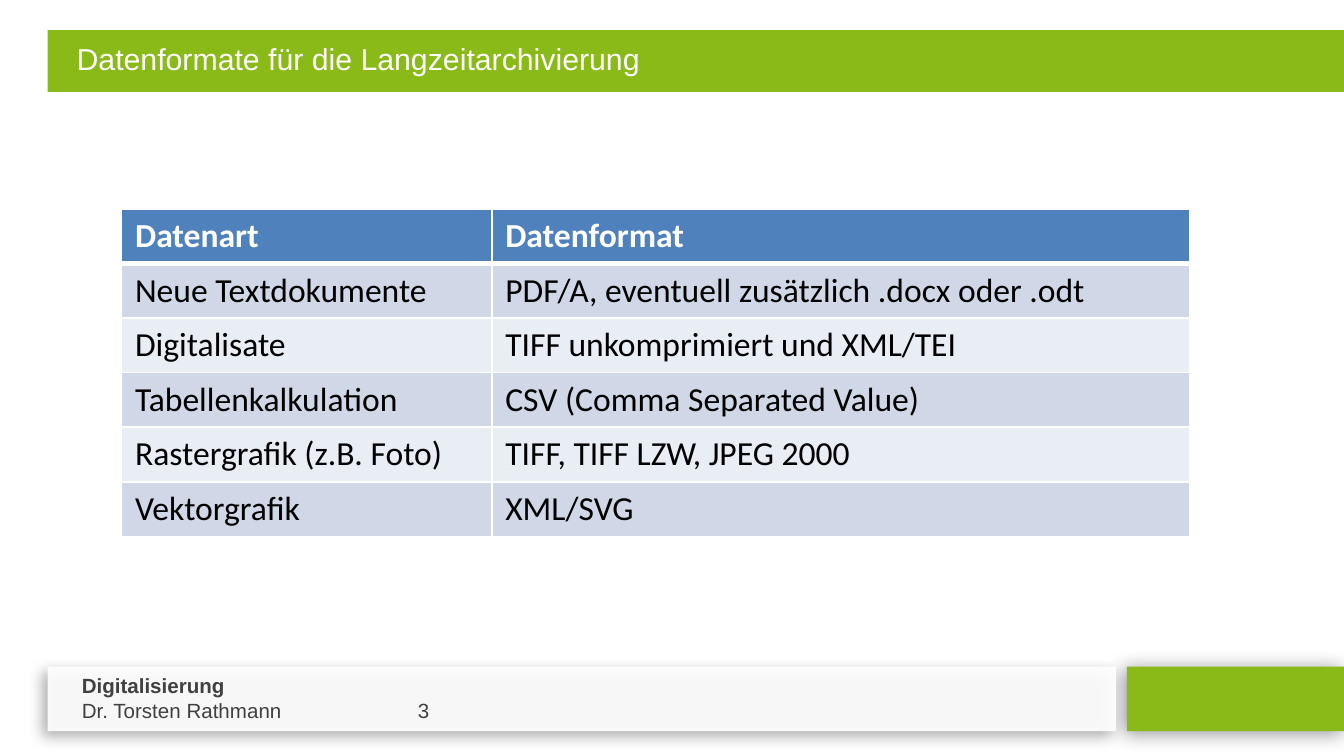
from lxml import etree
from pptx import Presentation
from pptx.dml.color import RGBColor
from pptx.enum.shapes import MSO_SHAPE
from pptx.enum.text import MSO_ANCHOR, PP_ALIGN
from pptx.oxml.ns import qn
from pptx.util import Inches, Pt

RECTANGLE = MSO_SHAPE.RECTANGLE
TOP = MSO_ANCHOR.TOP
LEFT = PP_ALIGN.LEFT

GREEN, WHITE, BLACK, GREY = "89BA17", "FFFFFF", "000000", "404040"
HEADER_BLUE = "4F81BD"
BAND_COLOURS = ("D0D8E8", "E9EDF4")
TITLE_ONLY = 5

FORMATS = [
    ("Datenart", "Datenformat"),
    ("Neue Textdokumente", "PDF/A, eventuell zusätzlich .docx oder .odt"),
    ("Digitalisate", "TIFF unkomprimiert und XML/TEI"),
    ("Tabellenkalkulation", "CSV (Comma Separated Value)"),
    ("Rastergrafik (z.B. Foto)", "TIFF, TIFF LZW, JPEG 2000"),
    ("Vektorgrafik", "XML/SVG"),
]


def colour(value):
    return RGBColor.from_string(value)


def grid(units):
    """The slide is a grid of 100 columns by 56.25 rows."""
    return Inches(units / 10)


def add_element(parent, tag, **attributes):
    element = etree.SubElement(parent, qn(tag))
    for name, value in attributes.items():
        element.set(name, str(value))
    return element


class SlideBuilder:
    heading_font, table_font = "Arial", "Calibri"

    def __init__(self, slide):
        self.slide = slide

    def style(self, paragraph, font, size, text_colour, bold=False):
        paragraph.alignment = LEFT
        paragraph.font.name = font
        paragraph.font.size = Pt(size)
        paragraph.font.bold = bold
        paragraph.font.color.rgb = colour(text_colour)

    def bar(self, left, top, width, height, fill, opacity=100, shadow=None):
        shape = self.slide.shapes.add_shape(RECTANGLE, *map(grid, (left, top, width, height)))
        shape.fill.solid()
        shape.fill.fore_color.rgb = colour(fill)
        shape.line.fill.background()
        shape.shadow.inherit = False
        properties = shape.element.spPr
        if opacity < 100:
            fill_colour = properties.find(qn("a:solidFill")).find(qn("a:srgbClr"))
            add_element(fill_colour, "a:alpha", val=opacity * 1000)
        if shadow:
            strength, blur, distance, angle = shadow
            outer = add_element(properties.find(qn("a:effectLst")), "a:outerShdw",
                                blurRad=Pt(blur), dist=Pt(distance), dir=angle * 60000,
                                algn="ctr", rotWithShape=0)
            shadow_colour = add_element(outer, "a:srgbClr", val=BLACK)
            add_element(shadow_colour, "a:alpha", val=strength * 1000)

    def title(self, text, left, top, width, height, indent):
        title = self.slide.shapes.title
        title.left, title.top, title.width, title.height = map(grid, (left, top, width, height))
        self.slide.shapes.element.append(title.element)  # in front of the bar
        frame = title.text_frame
        frame.margin_left = frame.margin_right = grid(1)
        frame.margin_top, frame.margin_bottom = grid(0.8), grid(0.5)
        frame.vertical_anchor = TOP
        frame.text = text
        paragraph = frame.paragraphs[0]
        paragraph._p.get_or_add_pPr().set("marL", str(grid(indent)))
        self.style(paragraph, self.heading_font, 16.2, WHITE)

    def footer(self, lines, left, top, width, height, tabs):
        box = self.slide.shapes.add_textbox(*map(grid, (left, top, width, height)))
        frame = box.text_frame
        frame.word_wrap = True
        frame.text = "\n".join(lines)
        for index, paragraph in enumerate(frame.paragraphs):
            stops = add_element(paragraph._p.get_or_add_pPr(), "a:tabLst")
            for tab in tabs:
                add_element(stops, "a:tab", pos=grid(tab), algn="l")
            self.style(paragraph, self.heading_font, 11, GREY, bold=index == 0)

    def borders(self, cell, top, bottom):
        properties = cell._tc.get_or_add_tcPr()
        for side, width in zip("LRTB", (1, 1, top, bottom)):
            line = add_element(properties, f"a:ln{side}", w=Pt(width))
            add_element(add_element(line, "a:solidFill"), "a:srgbClr", val=WHITE)

    def table(self, rows, left, top, columns, row_height):
        frame = self.slide.shapes.add_table(
            len(rows), len(columns), grid(left), grid(top),
            grid(sum(columns)), grid(row_height * len(rows)))
        table = frame.table
        for column, width in zip(table.columns, columns):
            column.width = grid(width)
        for row_index, texts in enumerate(rows):
            header = row_index == 0
            fill = HEADER_BLUE if header else BAND_COLOURS[(row_index - 1) % 2]
            for column_index, text in enumerate(texts):
                cell = table.cell(row_index, column_index)
                self.borders(cell, 3 if row_index == 1 else 1, 3 if header else 1)
                cell.fill.solid()
                cell.fill.fore_color.rgb = colour(fill)
                cell.text = text
                self.style(cell.text_frame.paragraphs[0], self.table_font, 18,
                           WHITE if header else BLACK, bold=header)


def main():
    presentation = Presentation()
    presentation.slide_width, presentation.slide_height = grid(100), grid(56.25)
    slide = presentation.slides.add_slide(presentation.slide_layouts[TITLE_ONLY])
    builder = SlideBuilder(slide)

    # Footer
    builder.bar(83.85, 49.6, 16.15, 4.8, GREEN, shadow=(42, 10.8, 2, 142))
    builder.bar(3.55, 49.6, 79.5, 4.8, WHITE, opacity=91, shadow=(34, 7.5, 4, 145))
    builder.footer(["Digitalisierung", "Dr. Torsten Rathmann\t\t\t3"],
                   5.1, 49.6, 59.8, 4.7, tabs=(17, 21, 25))

    # Title bar
    builder.bar(3.55, 2.25, 96.45, 4.6, GREEN)
    builder.title("Datenformate für die Langzeitarchivierung", 3.5, 2.2, 96.5, 3.5, indent=1.2)

    # Table of formats
    builder.table(FORMATS, 9.05, 15.55, (27.55, 51.95), 4.06)

    presentation.save("out.pptx")


if __name__ == "__main__":
    main()
